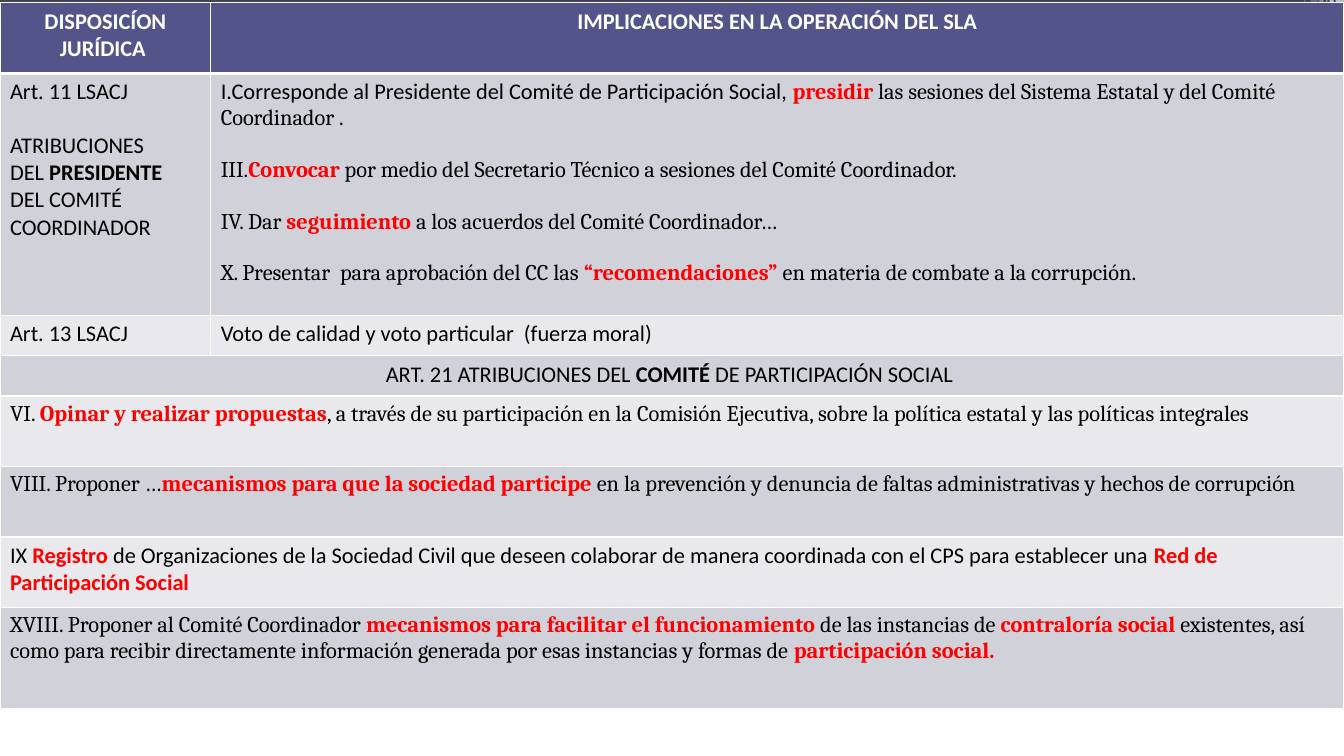
from lxml import etree
from pptx import Presentation
from pptx.dml.color import RGBColor
from pptx.enum.shapes import MSO_SHAPE
from pptx.enum.text import PP_ALIGN
from pptx.oxml.ns import qn
from pptx.util import Pt

RECTANGLE = MSO_SHAPE.RECTANGLE
CENTER, LEFT = PP_ALIGN.CENTER, PP_ALIGN.LEFT

# Content: each row holds cells, each cell paragraphs, each paragraph (style, text) spans
HEADER = [
    [[("head", "DISPOSICÍON JURÍDICA ")]],
    [[("head", "IMPLICACIONES EN LA OPERACIÓN DEL SLA")]],
]
PRESIDENT = [
    [
        [("sans", "Art. 11 LSACJ")],
        [("sans", "ATRIBUCIONES")],
        [("sans", "DEL "), ("sans bold", "PRESIDENTE"), ("sans", " DEL COMITÉ COORDINADOR")],
    ],
    [
        [("sans", "I.Corresponde al Presidente del Comité de Participación Social, "),
         ("serif red", "presidir"),
         ("serif", " las sesiones del Sistema Estatal y del Comité Coordinador .")],
        [("serif", "III."), ("serif red", "Convocar"),
         ("serif", " por medio del Secretario Técnico a sesiones del Comité Coordinador.")],
        [("serif", "IV. Dar "), ("serif red", "seguimiento"),
         ("serif", " a los acuerdos del Comité Coordinador…")],
        [("serif", "X. Presentar  para aprobación del CC las "),
         ("serif red", "“recomendaciones” "),
         ("serif", "en materia de combate a la corrupción.")],
    ],
]
VOTE = [
    [[("sans", "Art. 13 LSACJ")]],
    [[("sans", "Voto de calidad y voto particular  (fuerza moral)")]],
]
COMMITTEE = [[[("sans", "ART. 21 ATRIBUCIONES DEL "), ("sans bold", "COMITÉ "),
               ("sans", "DE PARTICIPACIÓN SOCIAL ")]]]
OPINION = [[[("serif", "VI. "), ("serif red", "Opinar y realizar propuestas"),
             ("serif", ", a través de su participación en la Comisión Ejecutiva, sobre la "
                       "política estatal y las políticas integrales")]]]
MECHANISMS = [[[("serif", "VIII. Proponer …"),
                ("serif red", "mecanismos para que la sociedad participe"),
                ("serif", " en la prevención y denuncia de faltas administrativas y hechos "
                          "de corrupción")]]]
REGISTRY = [[[("sans", "IX "), ("sans red", "Registro"),
              ("sans", " de Organizaciones de la Sociedad Civil que deseen colaborar de manera "
                       "coordinada con el CPS para establecer una "),
              ("sans red", "Red de Participación Social")]]]
OVERSIGHT = [[[("serif", "XVIII. Proponer al Comité Coordinador "),
               ("serif red", "mecanismos para facilitar el funcionamiento "),
               ("serif", "de las instancias de "),
               ("serif red", "contraloría social "),
               ("serif", "existentes, así como para recibir directamente información generada "
                         "por esas instancias y formas de "),
               ("serif red", "participación social.")]]]

DARK, LIGHT = "D1D1DA", "E9E9ED"
# Height, fill, alignment, cells
ROWS = [
    (50.4, "53548A", CENTER, HEADER),
    (172.8, DARK, LEFT, PRESIDENT),
    (28.8, LIGHT, LEFT, VOTE),
    (28.8, DARK, CENTER, COMMITTEE),
    (50.4, LIGHT, LEFT, OPINION),
    (50.4, DARK, LEFT, MECHANISMS),
    (50.4, LIGHT, LEFT, REGISTRY),
    (72, DARK, LEFT, OVERSIGHT),
]
COLUMNS = [150.5, 809.5]
TABLE_TOP = 2
PARAGRAPH_GAP = 18.5

STYLES = {
    "head": ("Calibri", True, "FFFFFF"),
    "sans": ("Calibri", False, "000000"),
    "sans bold": ("Calibri", True, "000000"),
    "sans red": ("Calibri", True, "FF0000"),
    "serif": ("Cambria", False, "000000"),
    "serif red": ("Cambria", True, "FF0000"),
}

# Top band and its light stripes: left, width, height, colour, opacity in percent
BANDS = [
    (0, 960, 24.5, "424456", 100),
    (954, 6, 49, "FFFFFF", 65),
    (949.7, 2.9, 49, "FFFFFF", 65),
    (947.5, 0.7, 49, "FFFFFF", 60),
    (942.5, 2.9, 49, "FFFFFF", 40),
    (936, 5.8, 46, "FFFFFF", 20),
    (931.7, 0.7, 46, "FFFFFF", 30),
]


def color(value):
    return RGBColor.from_string(value)


def add_band(page, left, width, height, fill, opacity):
    band = page.shapes.add_shape(RECTANGLE, Pt(left), 0, Pt(width), Pt(height))
    band.shadow.inherit = False
    band.line.fill.background()
    band.fill.solid()
    band.fill.fore_color.rgb = color(fill)
    tone = band.fill._xPr.find(".//" + qn("a:srgbClr"))
    etree.SubElement(tone, qn("a:alpha"), val=str(opacity * 1000))


def set_borders(cell, bottom):
    properties = cell._tc.get_or_add_tcPr()
    widths = {"a:lnL": 1, "a:lnR": 1, "a:lnT": 1, "a:lnB": bottom}
    for position, (tag, width) in enumerate(widths.items()):
        line = etree.Element(qn(tag), w=str(Pt(width)))
        fill = etree.SubElement(line, qn("a:solidFill"))
        etree.SubElement(fill, qn("a:srgbClr"), val="FFFFFF")
        properties.insert(position, line)


def write_cell(cell, paragraphs, alignment):
    frame = cell.text_frame
    for index, spans in enumerate(paragraphs):
        para = frame.add_paragraph() if index else frame.paragraphs[0]
        para.alignment = alignment
        # "DEL PRESIDENTE" continues the heading above it
        if index and spans[0][1] != "DEL ":
            para.space_before = Pt(PARAGRAPH_GAP)
        for style, text in spans:
            span = para.add_run()
            span.text = text
            name, bold, tone = STYLES[style]
            for key, value in {"name": name, "bold": bold, "size": Pt(16)}.items():
                setattr(span.font, key, value)
            span.font.color.rgb = color(tone)


def main():
    deck = Presentation()
    deck.slide_width, deck.slide_height = Pt(960), Pt(540)
    page = deck.slides.add_slide(deck.slide_layouts[6])

    for band in BANDS:
        add_band(page, *band)

    # Table
    height = sum(row[0] for row in ROWS)
    table = page.shapes.add_table(len(ROWS), len(COLUMNS), 0, Pt(TABLE_TOP),
                                  Pt(sum(COLUMNS)), Pt(height)).table
    table.first_row = table.horz_banding = False
    for column, width in zip(table.columns, COLUMNS):
        column.width = Pt(width)
    for index, (height, fill, alignment, cells) in enumerate(ROWS):
        table.rows[index].height = Pt(height)
        for cell in table.rows[index].cells:
            cell.fill.solid()
            cell.fill.fore_color.rgb = color(fill)
            set_borders(cell, 1 if index else 3)
        if len(cells) == 1:
            table.cell(index, 0).merge(table.cell(index, 1))
        for position, paragraphs in enumerate(cells):
            write_cell(table.cell(index, position), paragraphs, alignment)

    deck.save("out.pptx")


if __name__ == "__main__":
    main()
